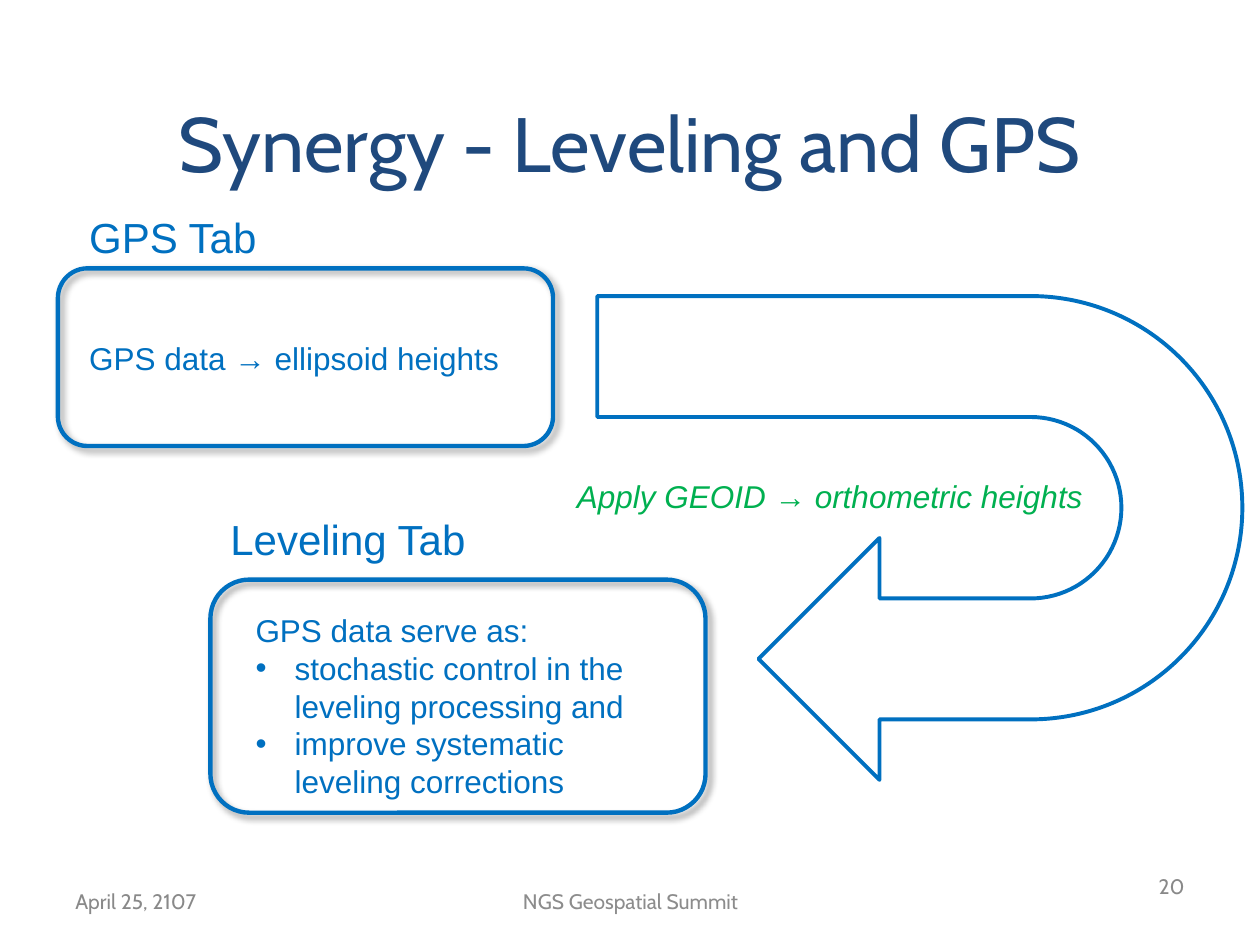
from lxml import etree
from pptx import Presentation
from pptx.dml.color import RGBColor
from pptx.enum.shapes import MSO_SHAPE
from pptx.enum.text import MSO_ANCHOR, MSO_AUTO_SIZE, PP_ALIGN
from pptx.oxml.ns import qn
from pptx.util import Inches, Pt

LEFT, CENTER, RIGHT = PP_ALIGN.LEFT, PP_ALIGN.CENTER, PP_ALIGN.RIGHT
TOP, MIDDLE = MSO_ANCHOR.TOP, MSO_ANCHOR.MIDDLE
GROW = MSO_AUTO_SIZE.SHAPE_TO_FIT_TEXT
NO_FIT = MSO_AUTO_SIZE.NONE
ROUNDED, U_TURN = MSO_SHAPE.ROUNDED_RECTANGLE, MSO_SHAPE.U_TURN_ARROW

COLUMNS, ROWS = 100, 75
TITLE_ONLY = 5
COLORS = {
    "title": "1F497D",
    "blue": "0070C0",
    "green": "00B050",
    "gray": "898989",
    "footer": "8C8C8C",
    "shadow": "000000",
}


class SlideBuilder:
    heading_font = "Cabin"
    body_font = "Arial"
    bullet_indent = Inches(0.31)

    def __init__(self, presentation):
        self.column = presentation.slide_width / COLUMNS
        self.row = presentation.slide_height / ROWS
        self.slide = presentation.slides.add_slide(
            presentation.slide_layouts[TITLE_ONLY])

    def box(self, left, top, width, height):
        return (round(left * self.column), round(top * self.row),
                round(width * self.column), round(height * self.row))

    def style(self, paragraph, size, color, font, italic=False, align=LEFT):
        paragraph.alignment = align
        paragraph.font.size = Pt(size)
        paragraph.font.name = font
        paragraph.font.italic = italic
        paragraph.font.color.rgb = RGBColor.from_string(COLORS[color])

    def title(self, text, area):
        shape = self.slide.shapes.title
        shape.left, shape.top, shape.width, shape.height = self.box(*area)
        frame = shape.text_frame
        frame.text = text
        frame.vertical_anchor = MIDDLE
        self.style(frame.paragraphs[0], 44, "title", self.heading_font,
                   align=CENTER)

    def text(self, lines, area, size=18, color="blue", font=body_font,
             italic=False, align=LEFT, anchor=TOP, fit=GROW, bullets_from=1):
        frame = self.slide.shapes.add_textbox(*self.box(*area)).text_frame
        frame.word_wrap = True
        frame.auto_size = fit
        frame.vertical_anchor = anchor
        frame.text = "\n".join(lines)
        for index, paragraph in enumerate(frame.paragraphs):
            if index >= bullets_from:
                self.bullet(paragraph)
            self.style(paragraph, size, color, font, italic, align)

    def bullet(self, paragraph):
        properties = paragraph._p.get_or_add_pPr()
        properties.set("marL", str(self.bullet_indent))
        properties.set("indent", str(-self.bullet_indent))
        etree.SubElement(properties, qn("a:buFont"), typeface=self.body_font)
        etree.SubElement(properties, qn("a:buChar"), char="•")

    def footer(self, text, area, align, color="gray"):
        self.text([text], area, 12, color, self.heading_font, align=align,
                  anchor=MIDDLE, fit=NO_FIT)

    def outline(self, kind, area, line_width):
        shape = self.slide.shapes.add_shape(kind, *self.box(*area))
        shape.shadow.inherit = False
        shape.fill.background()
        shape.line.color.rgb = RGBColor.from_string(COLORS["blue"])
        shape.line.width = Pt(line_width)
        return shape

    def panel(self, area):
        shape = self.outline(ROUNDED, area, 2.5)
        effects = shape._element.spPr.find(qn("a:effectLst"))
        shadow = etree.SubElement(
            effects, qn("a:outerShdw"), blurRad=str(Pt(4)), dist=str(Pt(3)),
            dir=str(45 * 60000), algn="tl", rotWithShape="0")
        color = etree.SubElement(shadow, qn("a:srgbClr"),
                                 val=COLORS["shadow"])
        etree.SubElement(color, qn("a:alpha"), val="40000")

    def u_turn(self, area):
        self.outline(U_TURN, area, 2.25).rotation = 90


def main():
    presentation = Presentation()
    presentation.slide_width = Inches(10)
    presentation.slide_height = Inches(7.5)
    builder = SlideBuilder(presentation)

    builder.title("Synergy - Leveling and GPS", (5, 5, 90, 12.5))
    builder.footer("April 25, 2107", (5, 69.5, 23.3, 4), LEFT)
    builder.footer("NGS Geospatial Summit", (34.2, 69.5, 31.7, 4), CENTER,
                   "footer")
    builder.footer("20", (71.7, 68.3, 23.3, 4), RIGHT)

    builder.panel((4.6, 21.3, 39.3, 14.1))
    builder.panel((16.7, 46, 39.3, 18.5))
    builder.text(["GPS data → ellipsoid heights"], (6.1, 26.4, 35.4, 4))
    builder.text(["Apply GEOID → orthometric heights"],
                 (44.8, 37.4, 42.8, 4), color="green", italic=True)
    builder.text(["GPS Tab"], (6.1, 16.3, 19.7, 5), size=24)
    builder.text(["Leveling Tab"], (17.3, 40.3, 23.1, 5), size=24)
    builder.u_turn((53.8, 17.1, 38.4, 51.2))
    builder.text(["GPS data serve as:",
                  "stochastic control in the leveling processing and",
                  "improve systematic leveling corrections"],
                 (19.3, 48, 35.4, 16.2))

    presentation.save("out.pptx")


if __name__ == "__main__":
    main()
